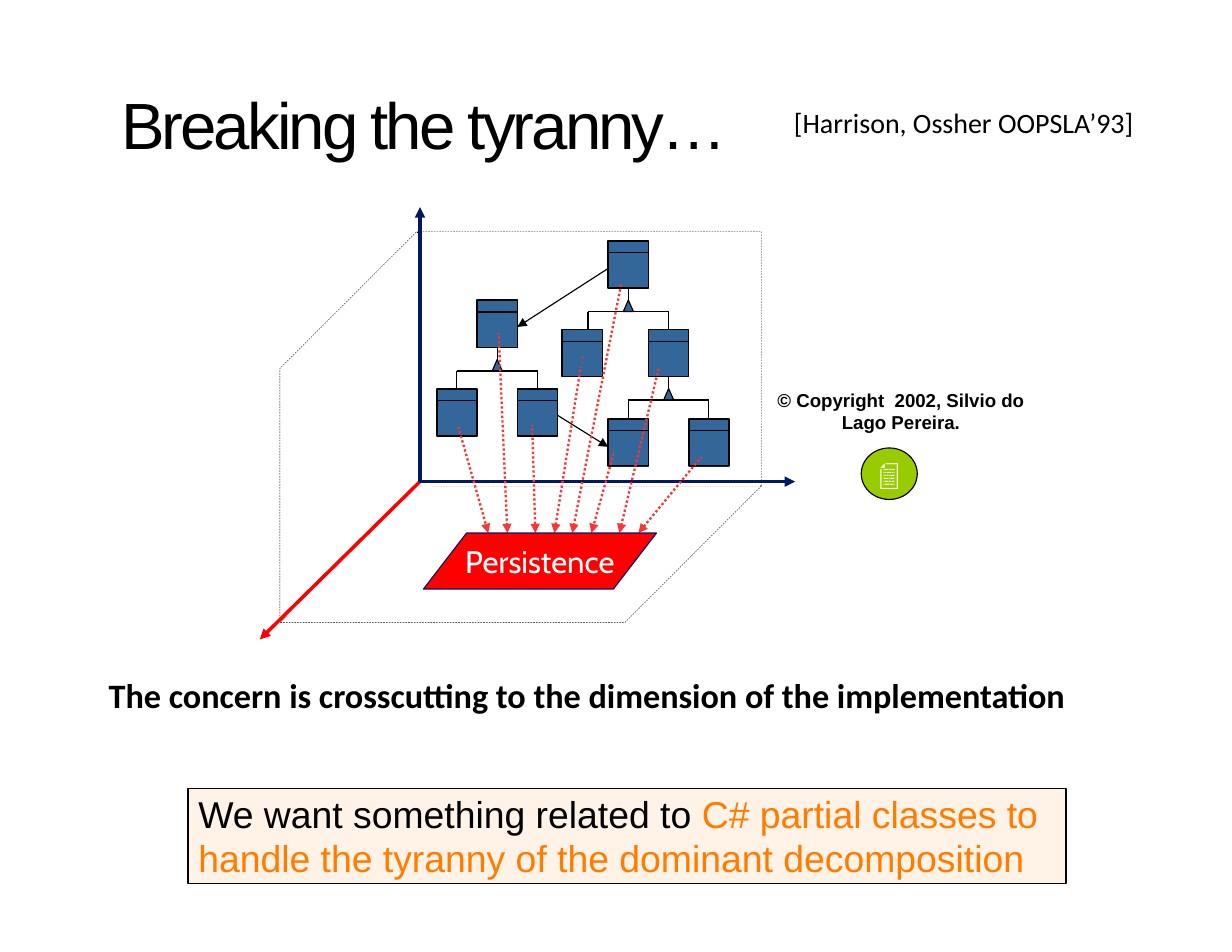
from pptx import Presentation
from pptx.dml.color import RGBColor
from pptx.enum.dml import MSO_LINE
from pptx.enum.shapes import MSO_CONNECTOR, MSO_SHAPE
from pptx.enum.text import MSO_ANCHOR, PP_ALIGN
from pptx.oxml.ns import qn
from pptx.util import Pt
from lxml.etree import SubElement

BLACK = RGBColor(0x00, 0x00, 0x00)
WHITE = RGBColor(0xFF, 0xFF, 0xFF)
BLUE = RGBColor(0x33, 0x66, 0x99)
NAVY = RGBColor(0x01, 0x19, 0x65)
RED = RGBColor(0xFF, 0x00, 0x00)
ROSE = RGBColor(0xFB, 0x35, 0x35)
GREEN = RGBColor(0x99, 0xCC, 0x00)
CREAM = RGBColor(0xFF, 0xF2, 0xE7)
ORANGE = RGBColor(0xFF, 0x7C, 0x00)

TITLE = "Breaking the tyranny…"
NOTES = [
    ((54, 429.8, 646.6, 68.4), PP_ALIGN.CENTER, "Calibri", 22, True,
     "The concern is crosscutting to the dimension of the implementation"),
    ((480.2, 246.2, 198, 36), PP_ALIGN.CENTER, "Arial", 12, True,
     "© Copyright  2002, Silvio do Lago Pereira."),
    ((447.8, 64.1, 288, 28.8), PP_ALIGN.RIGHT, "Calibri", 18, False,
     "[Harrison, Ossher OOPSLA’93]"),
]
CLAIM = [("We want something related to ", BLACK),
         ("C# partial classes to handle the tyranny of the dominant decomposition", ORANGE)]

BOX_W, BOX_H, HEAD = 25.9, 30.3, 7.6
CLASSES = [(306.7, 193), (280.8, 249.9), (332.6, 249.9), (391, 154.8),
           (361.4, 211.7), (416.9, 211.7), (391, 269.2), (442.8, 269.2)]
ROOTS = [CLASSES[0], CLASSES[3], CLASSES[5]]
TIP_W, TIP_Y, BAR_Y, KID_Y = 6.5, 38.1, 45.5, 57
CALLS = [((358.6, 267.1), (391, 287.3)), ((391.7, 172.1), (332.6, 210.2))]
MASKS = [(254.2, 300.2, 234, 12.2), (266.4, 150.5, 5.8, 174.2),
         (182.2, 300.2, 95.8, 95.8)]
AXES = [((270.7, 308.9), (167, 411.1), RED), ((270, 309.6), (270, 133.2), NAVY),
        ((270, 309.6), (511.2, 309.6), NAVY)]
PLANE_Y = 342.7
THREADS = [(293, 268.6, 313.9), (320.4, 210.2, 326.2), (342, 269.3, 344.2),
           (374.4, 229, 356.4), (401, 174.2, 367.9), (395.3, 288.7, 380.2),
           (425.5, 228.2, 398.2), (455, 288.7, 410.4)]
PATCH = 10.1
PATCHES = [(286.6, 262.8), (311.8, 203.8), (337.7, 262.8), (363.6, 225.4),
           (421.2, 225.4), (395.3, 172.1), (395.3, 283.7), (447.1, 283.7)]


def apply(item, form):
    for key, val in form.items():
        setattr(item, key, val)


def shape(kind, area, fill=None, line=None, width=0.75):
    item = slide.shapes.add_shape(kind, *map(Pt, area))
    item.shadow.inherit = False
    if fill is None:
        item.fill.background()
    else:
        item.fill.solid()
        item.fill.fore_color.rgb = fill
    if line is None:
        item.line.fill.background()
    else:
        item.line.color.rgb = line
        item.line.width = Pt(width)
    return item


def line(start, end, color=BLACK, width=0.75, arrow=False, dash=None):
    item = slide.shapes.add_connector(MSO_CONNECTOR.STRAIGHT, *map(Pt, start + end))
    item.line.color.rgb = color
    item.line.width = Pt(width)
    if dash:
        item.line.dash_style = dash
    if arrow:
        SubElement(item.line._get_or_add_ln(), qn("a:tailEnd"), type="triangle")
    SubElement(item._element.spPr, qn("a:effectLst"))


def write(item, runs, font, size, align, bold=False, frame=None):
    apply(item.text_frame, {"word_wrap": True, **(frame or {})})
    para = item.text_frame.paragraphs[0]
    para.alignment = align
    for text, color in runs:
        run = para.add_run()
        run.text = text
        apply(run.font, {"name": font, "size": Pt(size), "bold": bold})
        run.font.color.rgb = color
    return para


def tree(left, top):
    mid = left + BOX_W / 2
    ends = mid - BOX_W, mid + BOX_W
    bar = top + BAR_Y
    shape(MSO_SHAPE.ISOSCELES_TRIANGLE,
          (mid - TIP_W / 2, top + TIP_Y, TIP_W, BAR_Y - TIP_Y), BLUE, BLACK)
    line((mid, top + BOX_H), (mid, top + TIP_Y))
    line((ends[0], bar), (ends[1], bar))
    for x in ends:
        line((x, bar), (x, top + KID_Y))


deck = Presentation()
apply(deck, {"slide_width": Pt(792), "slide_height": Pt(612)})
slide = deck.slides.add_slide(deck.slide_layouts[5])

EDGES = {"margin_left": 0, "margin_top": 0, "margin_right": 0, "margin_bottom": 0}
MIDDLE = {"word_wrap": False, "vertical_anchor": MSO_ANCHOR.MIDDLE}

title = slide.shapes.title
apply(title, {"left": Pt(0), "top": Pt(54), "width": Pt(545), "height": Pt(51.1)})
para = write(title, [(TITLE, BLACK)], "Arial", 42, PP_ALIGN.CENTER,
             frame={**EDGES, "vertical_anchor": MSO_ANCHOR.MIDDLE})
para.runs[0].font._element.set("spc", "-190")

cube = shape(MSO_SHAPE.CUBE, (180, 149, 309.6, 251.3), None, BLACK, 0.25)
cube.adjustments[0] = 0.35
cube.line.dash_style = MSO_LINE.DASH
for flip in ("flipH", "flipV"):
    cube._element.spPr.xfrm.set(flip, "1")

for start, end in CALLS:
    line(start, end, arrow=True)
for root in ROOTS:
    tree(*root)
for x, y in CLASSES:
    shape(MSO_SHAPE.RECTANGLE, (x, y, BOX_W, BOX_H), BLUE, BLACK, 1)
    line((x, y + HEAD), (x + BOX_W, y + HEAD))
for area in MASKS:
    shape(MSO_SHAPE.RECTANGLE, area, WHITE)
for start, end, color in AXES:
    line(start, end, color, 2.25, True)
for x, y, foot in THREADS:
    line((x, y), (foot, PLANE_Y), ROSE, 1.5, True, MSO_LINE.ROUND_DOT)

plane = shape(MSO_SHAPE.PARALLELOGRAM, (272.2, PLANE_Y, 149.8, 36), RED, NAVY)
plane.adjustments[0] = 0.77
write(plane, [("Persistence", WHITE)], "Cabin", 20, PP_ALIGN.CENTER, frame=MIDDLE)
for x, y in PATCHES:
    shape(MSO_SHAPE.RECTANGLE, (x, y, PATCH, PATCH), BLUE, BLUE)

for area, align, font, size, bold, text in NOTES:
    note = slide.shapes.add_textbox(*map(Pt, area))
    write(note, [(text, BLACK)], font, size, align, bold)

badge = shape(MSO_SHAPE.OVAL, (553.7, 288, 36, 33.1), GREEN, BLACK)
write(badge, [("📄", WHITE)], "Cabin", 18, PP_ALIGN.CENTER, True, MIDDLE)

claim = shape(MSO_SHAPE.RECTANGLE, (121, 506.9, 564.5, 61.2), CREAM, BLACK, 1)
para = write(claim, CLAIM, "Arial", 24, PP_ALIGN.LEFT,
             frame={**EDGES, "margin_left": Pt(6.5), "margin_top": Pt(2.9),
                    "vertical_anchor": MSO_ANCHOR.TOP})
apply(para, {"line_spacing": 0.99, "space_before": Pt(3)})

deck.save("out.pptx")
